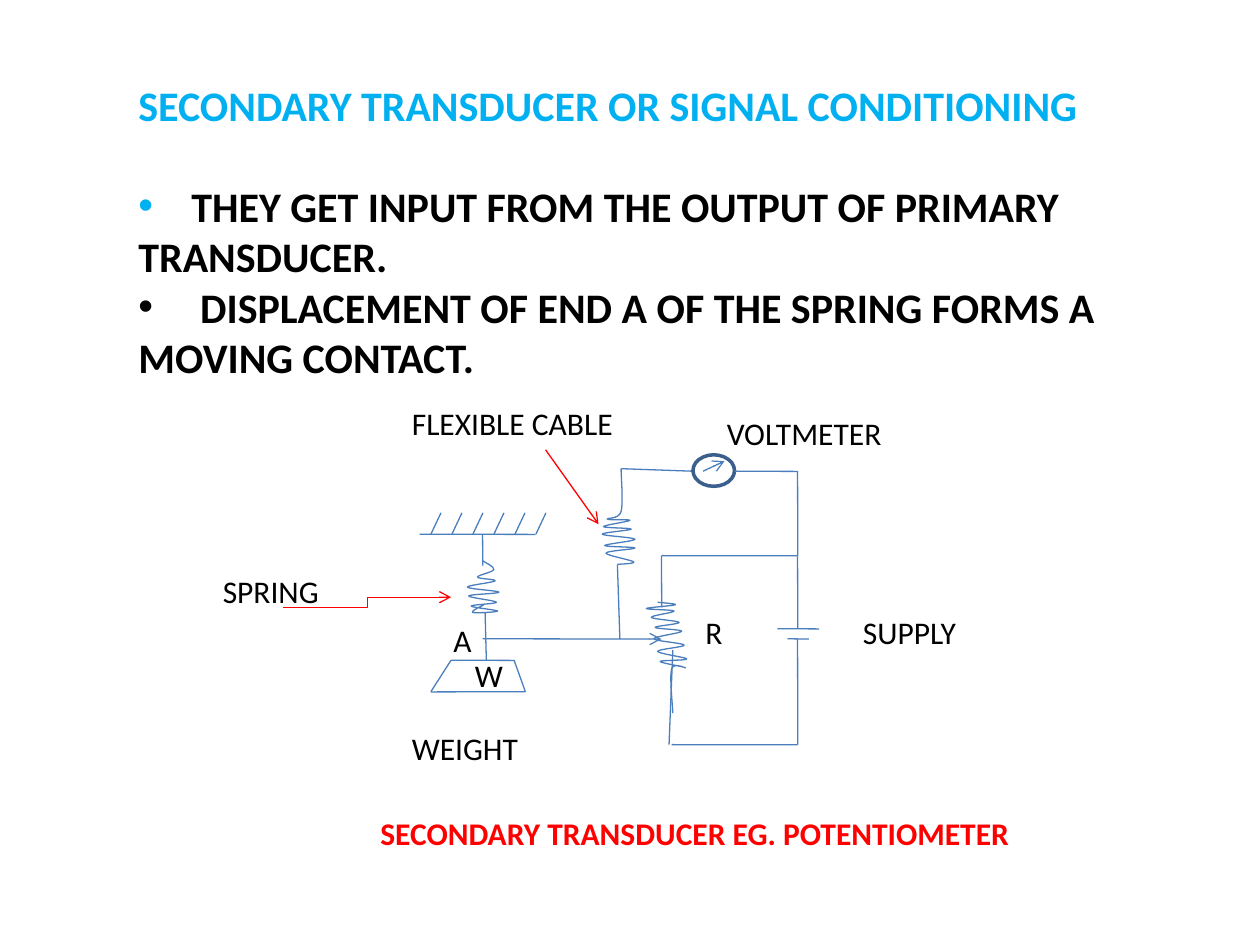
import pptx
import pptx.util
import pptx.dml.color
import pptx.enum.shapes
import pptx.enum.text
import pptx.oxml.ns
from lxml import etree

COLORS = {"title": "00B0F0", "text": "000000", "wire": "4B7EBC",
          "meter": "3A5F8C", "accent": "FF0000"}
FONT = "Calibri"
SLANT = pptx.util.Pt(0.12)  # keeps level wires from being drawn as hairlines


def cm(inches):
    return pptx.util.Cm(inches * 2.54)


def rgb(name):
    return pptx.dml.color.RGBColor.from_string(COLORS[name])


def sub(parent, tag, **attrs):
    return etree.SubElement(parent, pptx.oxml.ns.qn(tag), attrs)


def set_line(sp, color, width=0.75):
    sp.line.color.rgb = rgb(color)
    sp.line.width = pptx.util.Pt(width)


def add_run(p, text, size, color="text", bold=False):
    r = p.add_run()
    r.text = text
    r.font.name = FONT
    r.font.size = pptx.util.Pt(size)
    r.font.bold = bold
    r.font.color.rgb = rgb(color)


def add_text_frame(s, x, y, w, h):
    tf = s.shapes.add_textbox(cm(x), cm(y), cm(w), cm(h)).text_frame
    tf.word_wrap = True
    tf.auto_size = pptx.enum.text.MSO_AUTO_SIZE.SHAPE_TO_FIT_TEXT
    return tf


def add_label(s, text, x, y, w, color="text", bold=False):
    tf = add_text_frame(s, x, y, w, 0.4)
    add_run(tf.paragraphs[0], text, 18, color, bold)


def add_bullet(tf, text, bullet_color, tab):
    """Bullet whose first line starts at a tab stop and wraps to the margin."""
    p = tf.add_paragraph()
    pPr = p._p.get_or_add_pPr()
    pPr.set("marL", "0")
    pPr.set("indent", "0")
    sub(sub(pPr, "a:buClr"), "a:srgbClr", val=COLORS[bullet_color])
    sub(pPr, "a:buFont", typeface="Arial")
    sub(pPr, "a:buChar", char="•")
    sub(sub(pPr, "a:tabLst"), "a:tab", pos=str(int(cm(tab))), algn="l")
    add_run(p, "\t" + text, 24, bold=True)
    return p


def add_wire(s, x1, y1, x2, y2, color="wire", arrow=False, elbow=False):
    kinds = pptx.enum.shapes.MSO_CONNECTOR
    dx = SLANT if x1 == x2 else 0
    dy = SLANT if y1 == y2 else 0
    sp = s.shapes.add_connector(kinds.ELBOW if elbow else kinds.STRAIGHT,
                                cm(x1), cm(y1), cm(x2) + dx, cm(y2) + dy)
    set_line(sp, color)
    if arrow:
        sub(sp.line._get_or_add_ln(), "a:tailEnd", type="arrow")
    sub(sp._element.spPr, "a:effectLst")


def add_coil(s, points):
    """Open outline with one smooth cubic curve between each two points."""
    pts = [(cm(x), cm(y)) for x, y in points]
    fb = s.shapes.build_freeform(*pts[0])
    fb.add_line_segments(pts[1:], close=False)
    sp = fb.convert_to_shape()
    sp.shadow.inherit = False
    sp.fill.background()
    set_line(sp, "wire")
    # Bend the straight segments
    ends = [pts[0]] + pts + [pts[-1]]
    segments = list(sp._element.iter(pptx.oxml.ns.qn("a:lnTo")))
    for seg, a, b, c, d in zip(segments, ends, ends[1:], ends[2:], ends[3:]):
        seg.tag = pptx.oxml.ns.qn("a:cubicBezTo")
        seg.clear()
        leave = [q + (r - p) / 6 for p, q, r in zip(a, b, c)]
        arrive = [q - (r - p) / 6 for p, q, r in zip(b, c, d)]
        for x, y in (leave, arrive, c):
            sub(seg, "a:pt", x=str(round(x - sp.left)), y=str(round(y - sp.top)))


def add_heading(s):
    tf = add_text_frame(s, 1, 0.58, 8.75, 2.83)
    add_run(tf.paragraphs[0], "SECONDARY TRANSDUCER OR SIGNAL CONDITIONING",
            24, "title", True)
    p = add_bullet(tf, "THEY GET INPUT FROM THE OUTPUT OF PRIMARY TRANSDUCER.",
                   "title", 0.42)
    p.space_before = pptx.util.Pt(28.9)
    add_bullet(tf, "DISPLACEMENT OF END A OF THE SPRING FORMS A MOVING CONTACT.",
               "text", 0.49)


def add_spring_and_weight(s):
    # Ceiling with hatching
    add_wire(s, 3.33, 4.24, 4.25, 4.24)
    for i in range(6):
        x = 3.42 + i / 6
        add_wire(s, x + 0.08, 4.07, x, 4.24)
    # Spring
    add_wire(s, 3.83, 4.24, 3.83, 4.49)
    add_coil(s, [(3.83, 4.45), (3.92, 4.52), (3.79, 4.58), (3.93, 4.61),
                 (3.71, 4.66), (3.96, 4.7), (3.72, 4.73), (3.94, 4.78),
                 (3.74, 4.81), (3.95, 4.85), (3.75, 4.86), (3.84, 4.8)])
    add_wire(s, 3.85, 4.86, 3.86, 5.24)
    # Weight
    corners = [(3.58, 5.24), (4.08, 5.24), (4.17, 5.49), (3.42, 5.49)]
    for a, b in zip(corners, corners[1:] + corners[:1]):
        add_wire(s, *a, *b)


def add_circuit(s):
    # Moving contact and resistor
    add_wire(s, 3.83, 5.07, 5.25, 5.07, arrow=True)
    add_wire(s, 5.25, 4.41, 5.25, 4.82)
    add_coil(s, [(5.22, 4.78), (5.36, 4.8), (5.13, 4.83), (5.35, 4.85),
                 (5.17, 4.9), (5.39, 4.94), (5.2, 4.98), (5.41, 5.01),
                 (5.19, 5.07), (5.43, 5.12), (5.22, 5.17), (5.45, 5.23),
                 (5.24, 5.25), (5.44, 5.3), (5.33, 5.31), (5.34, 5.66)])
    # Supply branch with battery plates
    add_wire(s, 5.25, 4.41, 6.33, 4.41)
    add_wire(s, 6.33, 4.41, 6.33, 4.99)
    add_wire(s, 6.17, 4.99, 6.5, 4.99)
    add_wire(s, 6.25, 5.07, 6.42, 5.07)
    add_wire(s, 6.33, 5.07, 6.33, 5.91)
    # Flexible cable
    add_coil(s, [(4.93, 3.72), (4.93, 4.06), (4.82, 4.12), (5, 4.13),
                 (4.79, 4.18), (5.01, 4.2), (4.78, 4.24), (5.04, 4.28),
                 (4.8, 4.33), (5.04, 4.35), (4.81, 4.39), (5.03, 4.46),
                 (4.9, 4.48)])
    add_wire(s, 4.9, 4.48, 4.92, 5.07)
    # Voltmeter
    add_wire(s, 4.93, 3.72, 5.5, 3.74)
    sp = s.shapes.add_shape(pptx.enum.shapes.MSO_SHAPE.OVAL,
                            cm(5.5), cm(3.61), cm(0.33), cm(0.25))
    sp.shadow.inherit = False
    sp.fill.background()
    set_line(sp, "meter", 2)
    add_wire(s, 5.83, 3.74, 6.33, 3.74)
    add_wire(s, 6.33, 3.74, 6.33, 4.41)
    add_wire(s, 5.58, 3.74, 5.75, 3.66, arrow=True)
    # Return wires
    add_wire(s, 5.33, 5.91, 6.33, 5.91)
    add_wire(s, 5.34, 5.16, 5.31, 5.91)


def add_labels(s):
    for text, x, y, w in [("W", 3.67, 5.16, 0.42), ("WEIGHT", 3.17, 5.74, 1.33),
                          ("SPRING", 1.67, 4.49, 1.5), ("VOLTMETER", 5.67, 3.24, 2),
                          ("SUPPLY", 6.75, 4.82, 1.67), ("R", 5.5, 4.82, 0.33),
                          ("FLEXIBLE CABLE", 3.17, 3.16, 2.08),
                          ("A", 3.5, 4.88, 0.25)]:
        add_label(s, text, x, y, w)
    add_label(s, "SECONDARY TRANSDUCER EG. POTENTIOMETER", 2.92, 6.41, 6.58,
              "accent", True)
    # Pointers
    add_wire(s, 2.25, 4.82, 3.58, 4.74, "accent", arrow=True, elbow=True)
    add_wire(s, 4.33, 3.57, 4.75, 4.16, "accent", arrow=True)


def main():
    prs = pptx.Presentation()
    prs.slide_width, prs.slide_height = cm(10), cm(7.5)
    s = prs.slides.add_slide(prs.slide_layouts[6])
    add_heading(s)
    add_spring_and_weight(s)
    add_circuit(s)
    add_labels(s)
    prs.save("out.pptx")


if __name__ == "__main__":
    main()
